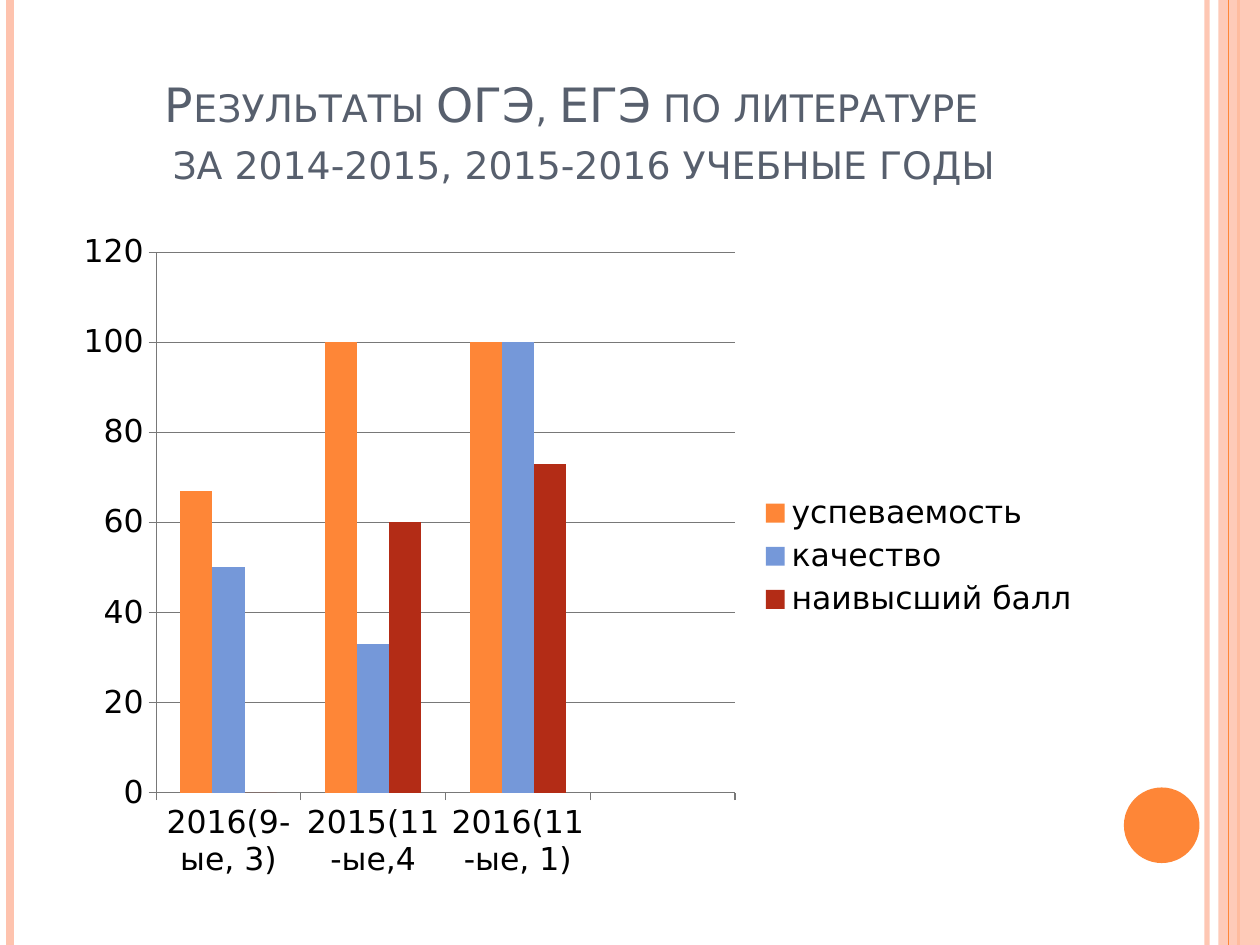
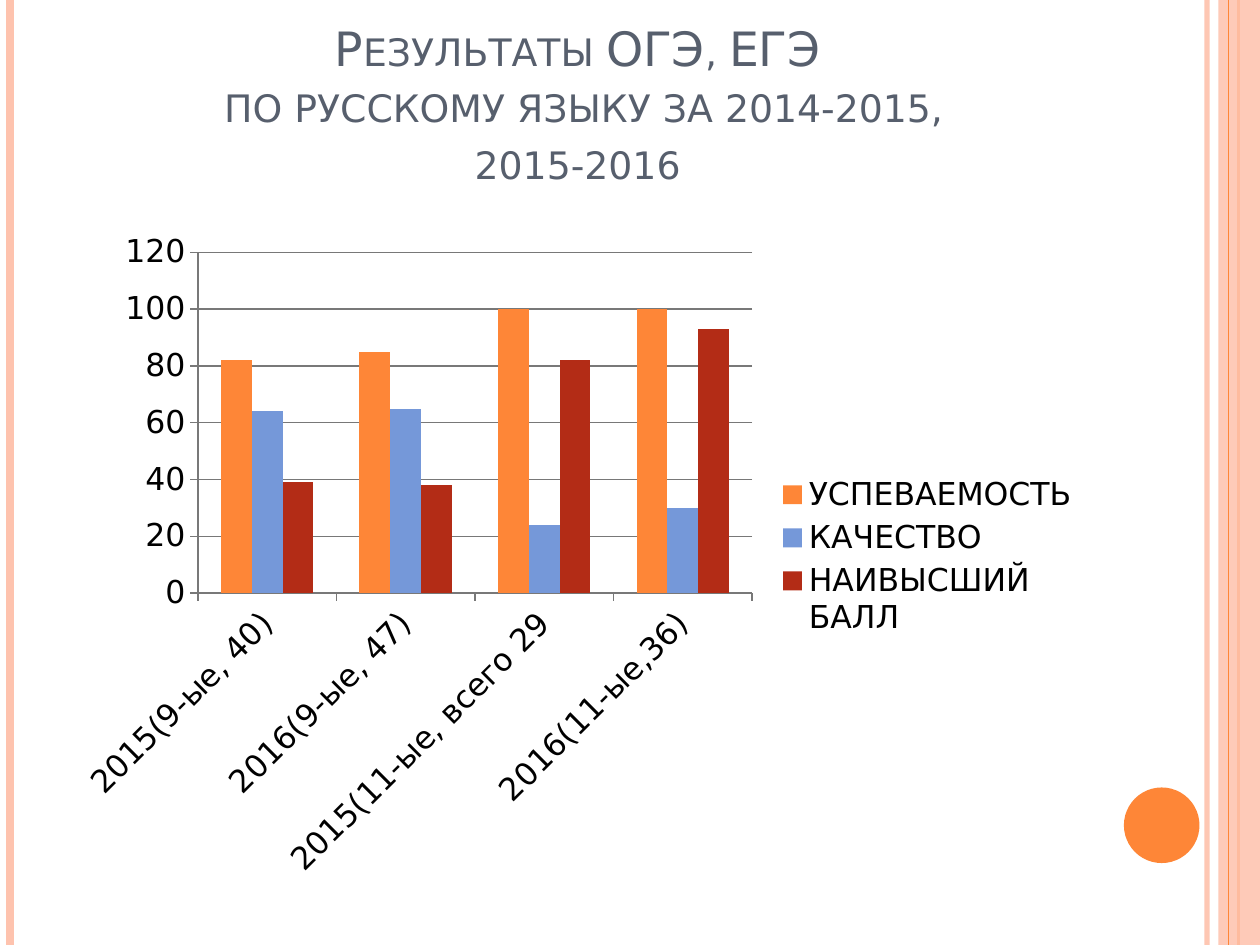
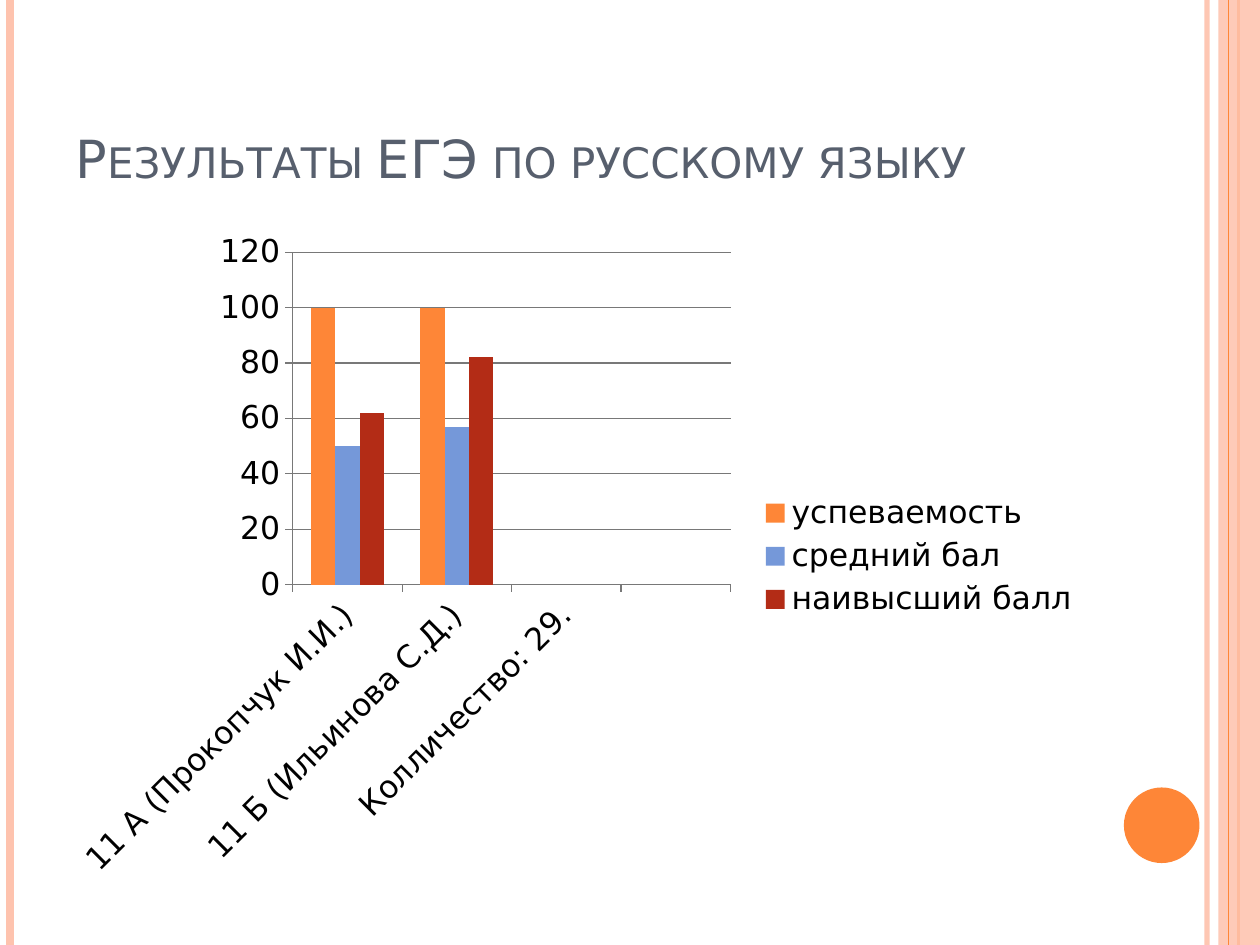
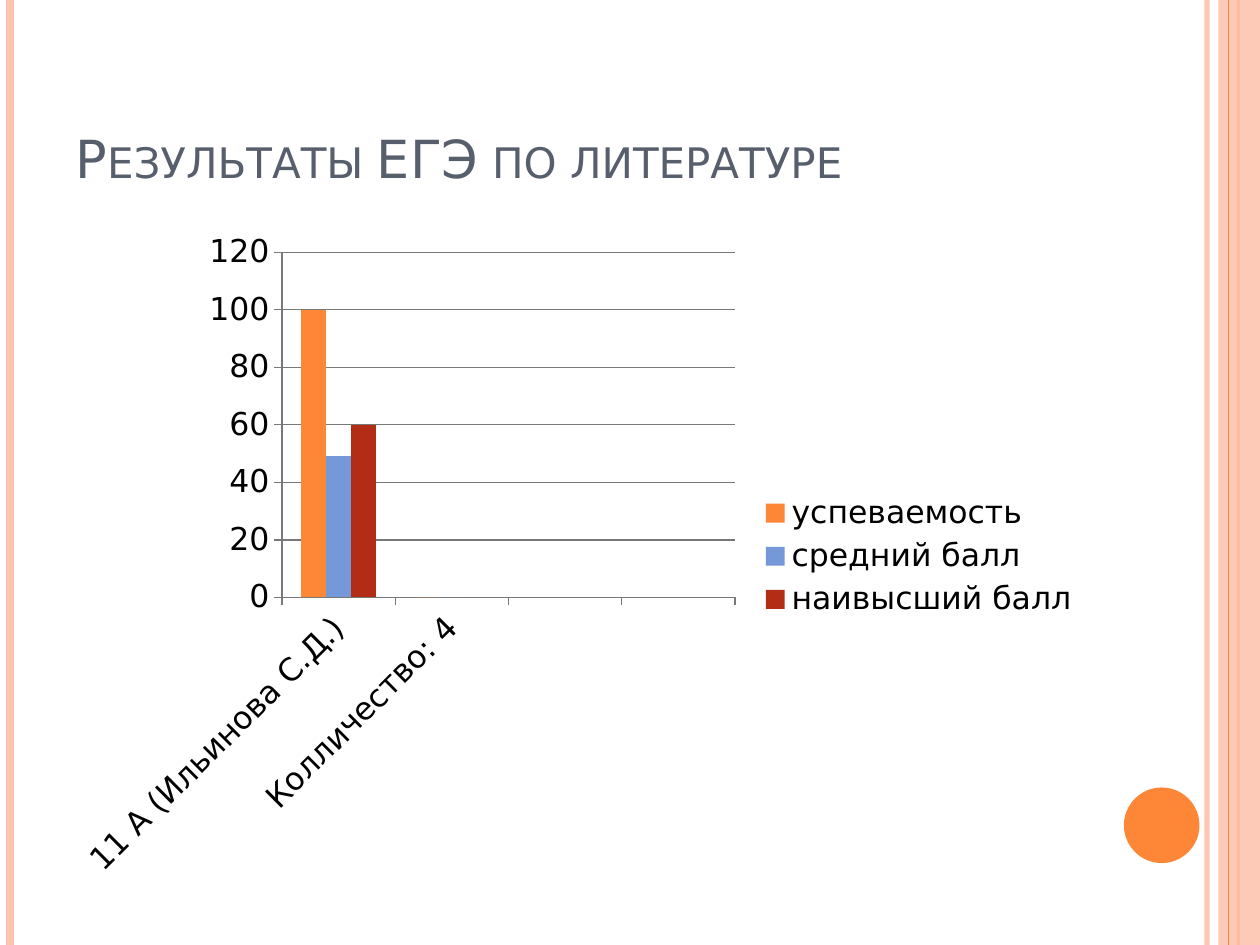
from pptx import Presentation
from pptx.chart.data import CategoryChartData
from pptx.dml.color import RGBColor
from pptx.enum.chart import XL_CHART_TYPE, XL_LEGEND_POSITION, XL_TICK_MARK
from pptx.enum.shapes import MSO_CONNECTOR, MSO_SHAPE
from pptx.enum.text import MSO_ANCHOR, PP_ALIGN
from pptx.oxml.ns import qn
from pptx.util import Inches, Pt
from lxml import etree

COLUMN = XL_CHART_TYPE.COLUMN_CLUSTERED
RIGHT = XL_LEGEND_POSITION.RIGHT
OUTSIDE = XL_TICK_MARK.OUTSIDE
STRAIGHT = MSO_CONNECTOR.STRAIGHT
RECT, OVAL = MSO_SHAPE.RECTANGLE, MSO_SHAPE.OVAL
BOTTOM = MSO_ANCHOR.BOTTOM
LEFT, CENTER = PP_ALIGN.LEFT, PP_ALIGN.CENTER

WIDTH, HEIGHT = 10, 7.5
FONT = "DejaVu Sans"
ORANGE, PEACH, SLATE, GRAY = "FE8637", "FEC3AE", "575F6D", "787878"
BARS = [ORANGE, "7598D9", "B32C16"]
HEAD_BOX = (0.5, 0.3, 8.17, 1.25)
CHART_BOX = (0.5, 1.75, 8.17, 5.33)

SLIDES = [
    {
        "title": "Результаты ОГЭ, ЕГЭ по литературе \n за 2014-2015, 2015-2016 учебные годы",
        "size": 27,
        "align": CENTER,
        "cats": ["2016(9-ые, 3)", "2015(11-ые,4", "2016(11-ые, 1)", ""],
        "rows": {
            "успеваемость": [67, 100, 100, None],
            "качество": [50, 33, 100, None],
            "наивысший балл": [0, 60, 73, None],
        },
    },
    {
        "title": "Результаты ОГЭ, ЕГЭ\n по русскому языку за 2014-2015,\n2015-2016",
        "size": 27,
        "align": CENTER,
        "cats": ["2015(9-ые, 40)", "2016(9-ые, 47)", "2015(11-ые, всего 29", "2016(11-ые,36)"],
        "rows": {
            "УСПЕВАЕМОСТЬ": [82, 85, 100, 100],
            "КАЧЕСТВО": [64, 65, 24, 30],
            "НАИВЫСШИЙ БАЛЛ": [39, 38, 82, 93],
        },
    },
    {
        "title": "Результаты ЕГЭ по русскому языку",
        "size": 30,
        "align": LEFT,
        "cats": ["11 А (Прокопчук И.И.)", "11 Б (Ильинова С.Д.)", "Колличество: 29.", ""],
        "rows": {
            "успеваемость": [100, 100, None, None],
            "средний бал": [50, 57, None, None],
            "наивысший балл": [62, 82, None, None],
        },
    },
    {
        "title": "Результаты ЕГЭ по литературе",
        "size": 30,
        "align": LEFT,
        "cats": ["11 А (Ильинова С.Д.)", "Колличество: 4", "", ""],
        "rows": {
            "успеваемость": [100, 0, None, None],
            "средний балл": [49, 0, None, None],
            "наивысший балл": [60, None, None, None],
        },
    },
]


def paint(target, color):
    target.solid()
    target.fore_color.rgb = RGBColor.from_string(color)


def fade(item, percent):
    for node in item.element.xpath(".//a:srgbClr"):
        etree.SubElement(node, qn("a:alpha")).set("val", str(percent * 1000))


def inches(box):
    return [Inches(side) for side in box]


def add_rule(slide, x, color, width, alpha=100):
    rule = slide.shapes.add_connector(STRAIGHT, *inches((x, 0, x, HEIGHT)))
    rule.line.width = Pt(width)
    paint(rule.line.fill, color)
    etree.SubElement(rule.element.spPr, qn("a:effectLst"))
    if alpha < 100:
        fade(rule, alpha)


def add_block(slide, kind, box, color, alpha=100):
    block = slide.shapes.add_shape(kind, *inches(box))
    block.shadow.inherit = False
    paint(block.fill, color)
    block.line.fill.background()
    if alpha < 100:
        fade(block, alpha)


def add_frame(slide):
    add_rule(slide, 9.58, PEACH, 3, 93)
    add_rule(slide, 0.08, PEACH, 4.5)
    add_rule(slide, 9.83, ORANGE, 1.5)
    add_block(slide, RECT, (9.67, 0, 0.33, HEIGHT), PEACH, 87)
    add_rule(slide, 9.75, ORANGE, 0.75)
    add_block(slide, OVAL, (8.92, 6.25, 0.6, 0.6), ORANGE)


def add_title(slide, box, text, size, align):
    frame = slide.shapes.add_textbox(*inches(box)).text_frame
    frame.word_wrap = True
    frame.vertical_anchor = BOTTOM
    para = frame.paragraphs[0]
    para.text = text
    para.alignment = align
    for run in para.runs:
        for key, value in {"name": FONT, "size": Pt(size)}.items():
            setattr(run.font, key, value)
        run.font.color.rgb = RGBColor.from_string(SLATE)
        run.font._element.set("cap", "small")


def style_axis(axis, grid):
    axis.has_major_gridlines = grid
    axis.major_tick_mark = OUTSIDE
    lines = [axis.format.line]
    if grid:
        lines.append(axis.major_gridlines.format.line)
    for line in lines:
        line.width = Pt(0.75)
        paint(line.fill, GRAY)


def add_bars(slide, box, cats, rows):
    data = CategoryChartData()
    data.categories = cats
    for name, values in rows.items():
        data.add_series(name, values)
    chart = slide.shapes.add_chart(COLUMN, *inches(box), data).chart
    for point in chart.element.xpath(".//c:cat//c:pt[not(string(c:v))]"):
        point.getparent().remove(point)
    chart.has_title = False
    chart.font.name = FONT
    chart.font.size = Pt(18)
    chart.font.color.rgb = RGBColor.from_string("000000")
    chart.has_legend = True
    chart.legend.position = RIGHT
    chart.legend.include_in_layout = False
    style_axis(chart.category_axis, False)
    style_axis(chart.value_axis, True)
    plot = chart.plots[0]
    for key, value in {"gap_width": 150, "overlap": 0, "vary_by_categories": False}.items():
        setattr(plot, key, value)
    for series, color in zip(plot.series, BARS):
        series.invert_if_negative = False
        paint(series.format.fill, color)


def main():
    deck = Presentation()
    deck.slide_width, deck.slide_height = Inches(WIDTH), Inches(HEIGHT)
    for page in SLIDES:
        slide = deck.slides.add_slide(deck.slide_layouts[6])
        add_frame(slide)
        add_title(slide, HEAD_BOX, page["title"], page["size"], page["align"])
        add_bars(slide, CHART_BOX, page["cats"], page["rows"])
    deck.save("out.pptx")


if __name__ == "__main__":
    main()
